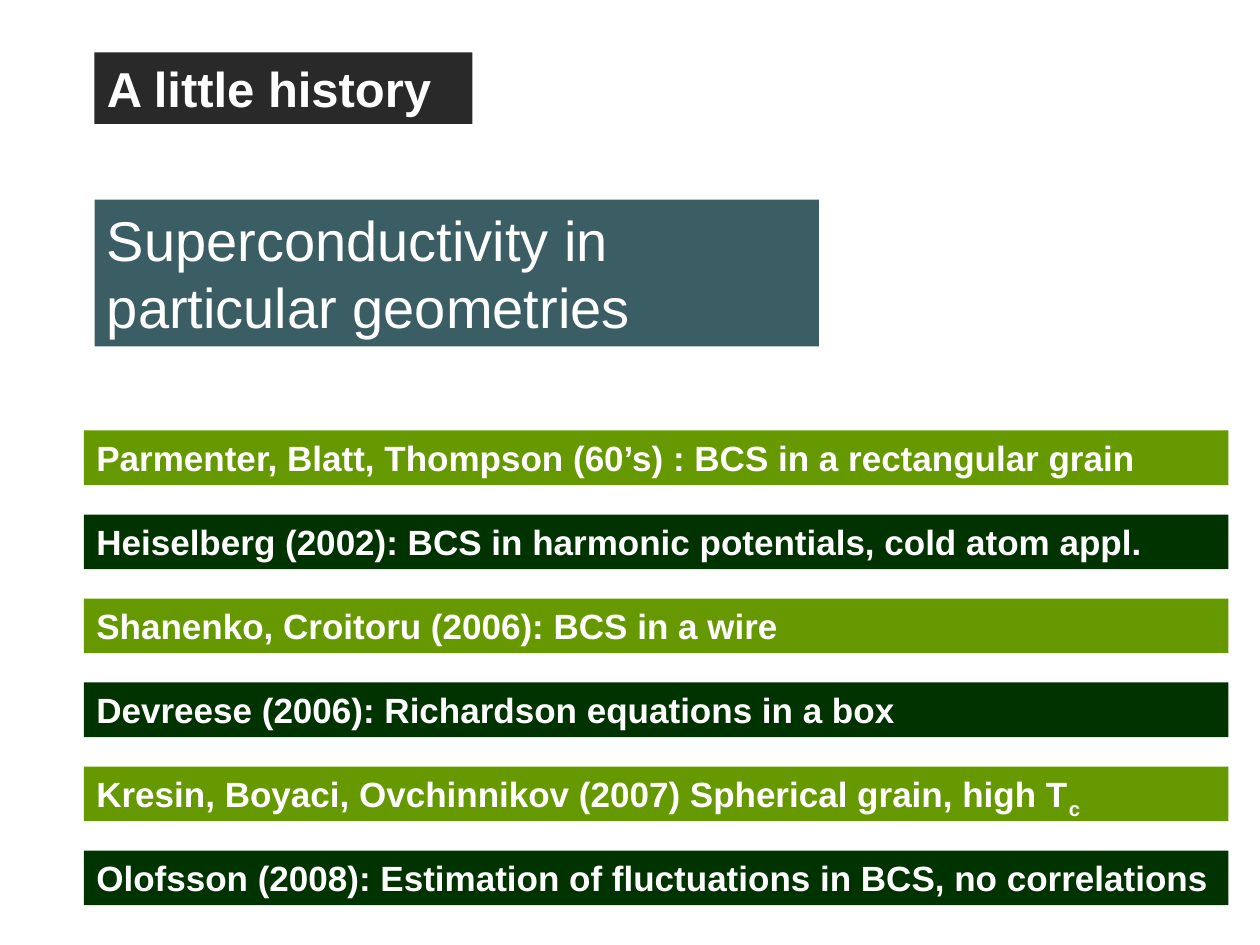
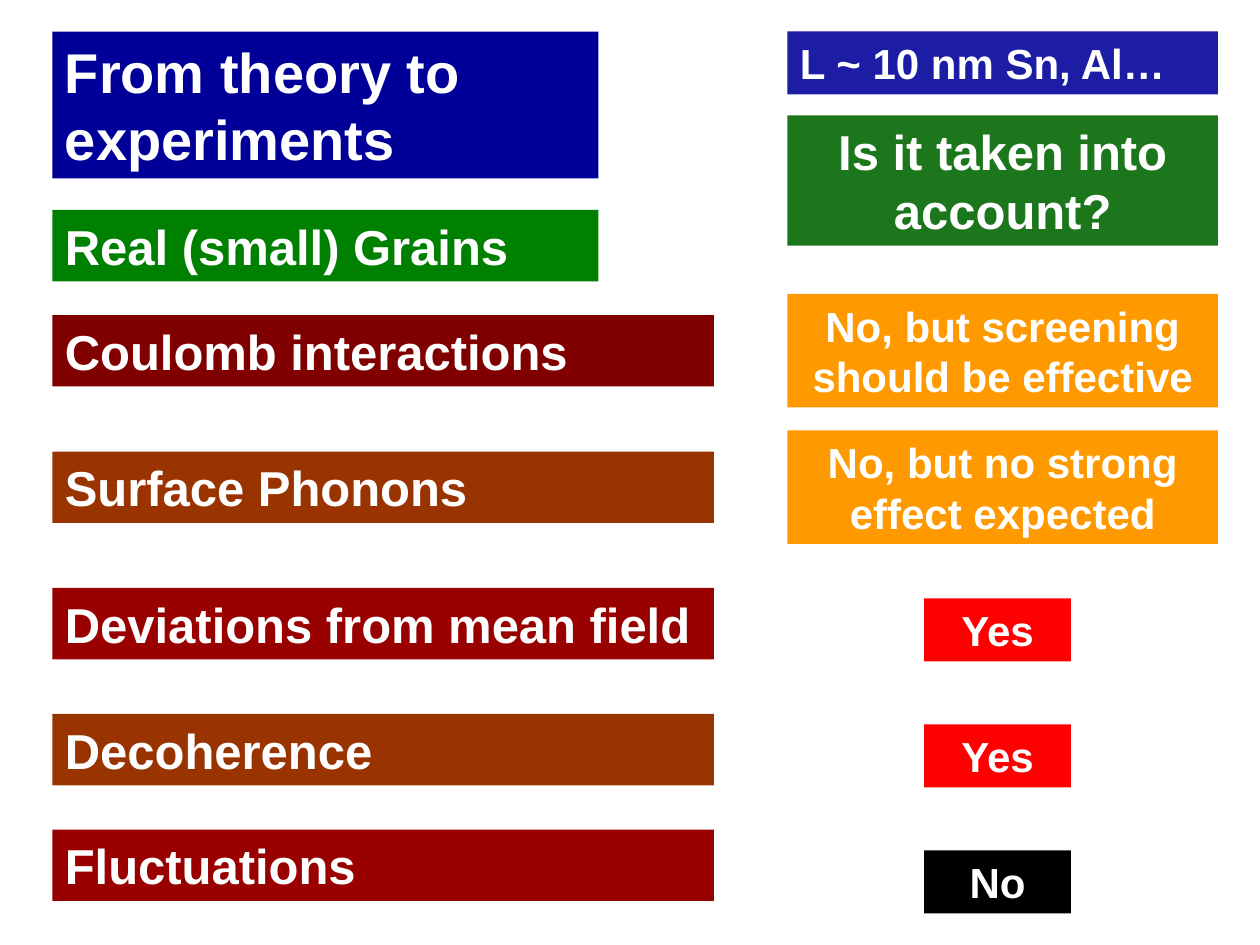
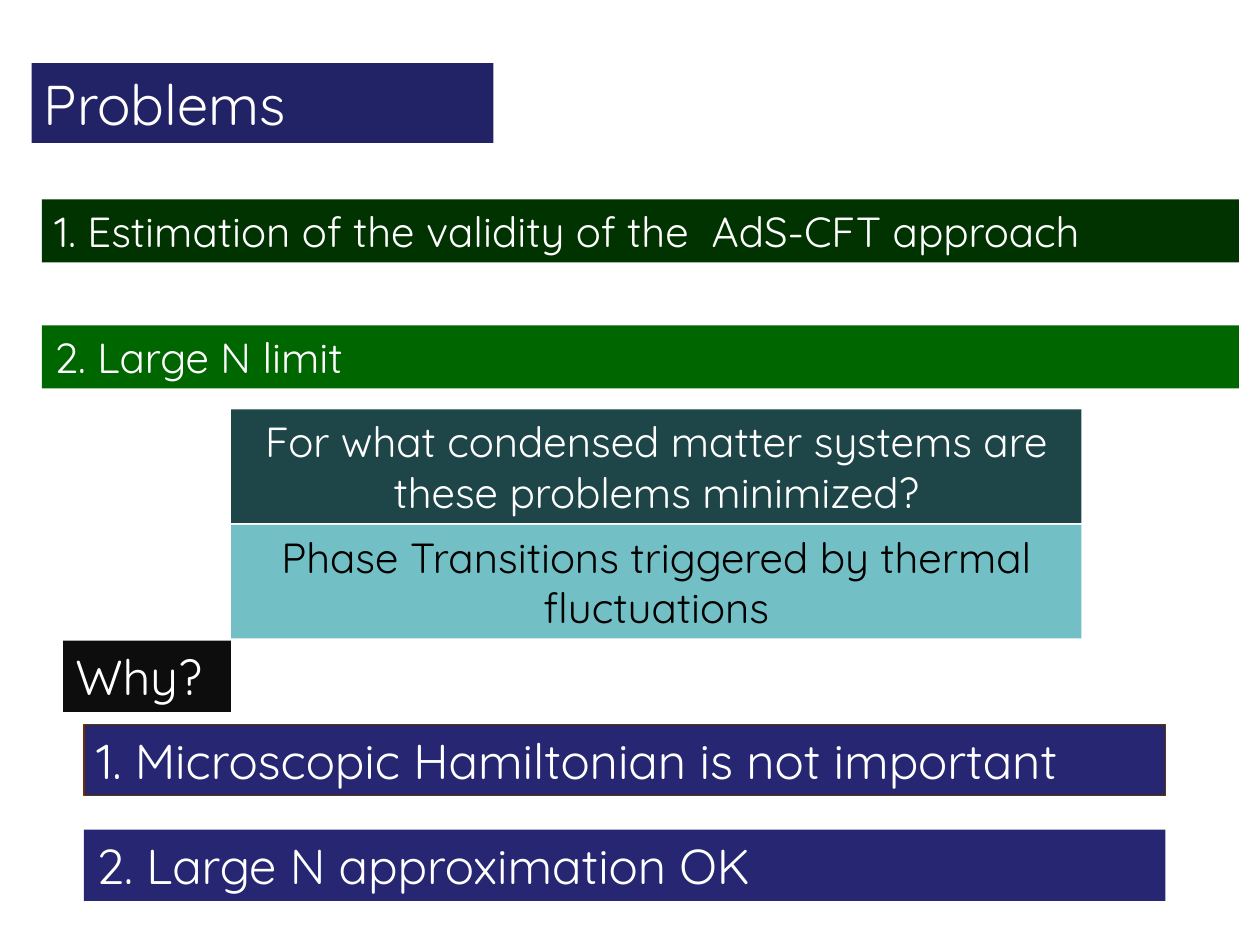
from itertools import cycle

from lxml.etree import SubElement
from pptx import Presentation
from pptx.dml.color import RGBColor
from pptx.enum.text import MSO_AUTO_SIZE, PP_ALIGN
from pptx.oxml.ns import qn
from pptx.util import Inches, Pt

# The slide is a grid of 120 columns by 90 rows, 12 to the inch.
CELL = Inches(1) // 12
WHITE = "FFFFFF"
DARK_GREEN = "003300"
LIME = "669900"
ORANGE = "FF9900"
RED = "FF0000"
MAROON = "990000"
RUST = "993300"
NAVY = "000099"
INDIGO = "262673"


def rgb(hex_string):
    return RGBColor.from_string(hex_string)


def band(slide, column, row, columns, text, size, fill, font="Arial", bold=True,
         color=WHITE, centred=False, lines=1, opacity=100, subscript=""):
    """Add a filled band of text whose height follows from its lines."""
    height = Inches(0.1) + Pt(1.2 * size * lines)
    box = slide.shapes.add_textbox(column * CELL, row * CELL, columns * CELL, height)
    box.fill.solid()
    box.fill.fore_color.rgb = rgb(fill)
    if opacity < 100:
        fill_color = box.fill._xPr.find(qn("a:solidFill"))[0]
        SubElement(fill_color, qn("a:alpha"), val=str(opacity * 1000))

    frame = box.text_frame
    frame.word_wrap = True
    frame.auto_size = MSO_AUTO_SIZE.SHAPE_TO_FIT_TEXT
    paragraph = frame.paragraphs[0]
    paragraph.alignment = PP_ALIGN.CENTER if centred else PP_ALIGN.LEFT
    for part in filter(None, (text, subscript)):
        run = paragraph.add_run()
        run.text = part
        run.font.name = font
        run.font.size = Pt(size)
        run.font.bold = bold
        run.font.color.rgb = rgb(color)
    if subscript:
        run.font._element.set("baseline", "-25000")
    return box


prs = Presentation()
prs.slide_width = 120 * CELL
prs.slide_height = 90 * CELL
blank = prs.slide_layouts[6]

# Slide 1: earlier work, one band per group of authors
history = prs.slides.add_slide(blank)
band(history, 9, 5, 36, "A little history", 28, "292929")
band(history, 9, 19, 69, "Superconductivity in particular geometries", 32, "224B50",
     bold=False, lines=2, opacity=89)

works = [
    ("Parmenter, Blatt, Thompson (60’s) : BCS in a rectangular grain", ""),
    ("Heiselberg (2002): BCS in harmonic potentials, cold atom appl.", ""),
    ("Shanenko, Croitoru (2006): BCS in a wire", ""),
    ("Devreese (2006): Richardson equations in a box", ""),
    ("Kresin, Boyaci, Ovchinnikov (2007) Spherical grain, high T", "c"),
    ("Olofsson (2008): Estimation of fluctuations in BCS, no correlations", ""),
]
for index, ((work, subscript), fill) in enumerate(zip(works, cycle([LIME, DARK_GREEN]))):
    band(history, 8, 41 + 8 * index, 109, work, 20, fill, subscript=subscript)

# Slide 2: effects on the left, whether they are included on the right
experiments = prs.slides.add_slide(blank)
band(experiments, 5, 3, 52, "From theory to experiments", 32, NAVY, lines=2)
band(experiments, 5, 20, 52, "Real (small) Grains", 28, "008000")
band(experiments, 75, 3, 41, "L ~ 10 nm Sn, Al…", 24, NAVY, opacity=89)
band(experiments, 75, 11, 41, "Is it taken into account?", 28, "006600",
     centred=True, lines=2, opacity=89)

effects = [
    (30, "Coulomb interactions", "800000"),
    (43, "Surface Phonons", RUST),
    (56, "Deviations from mean field", MAROON),
    (68, "Decoherence", RUST),
    (79, "Fluctuations", MAROON),
]
for row, effect, fill in effects:
    band(experiments, 5, row, 63, effect, 28, fill)

long_answers = [
    (28, "No, but screening should be effective"),
    (41, "No, but no strong effect expected"),
]
for row, answer in long_answers:
    band(experiments, 75, row, 41, answer, 24, ORANGE, centred=True, lines=2)

short_answers = [("Yes", RED), ("Yes", RED), ("No", "000000")]
for index, (answer, fill) in enumerate(short_answers):
    band(experiments, 88, 57 + 12 * index, 14, answer, 24, fill, centred=True)

# Slide 3: problems, the question they raise, and the reasons
problems = prs.slides.add_slide(blank)
light = {"font": "Quicksand", "bold": False}
band(problems, 3, 6, 44, "Problems", 32, "222267", **light)
band(problems, 4, 19, 114, "1. Estimation of the validity of the  AdS-CFT approach", 24,
     DARK_GREEN, **light)
band(problems, 4, 31, 114, "2. Large N limit", 24, "006600", **light)
band(problems, 22, 39, 81, "For what condensed matter systems are these problems minimized?",
     24, "1E4649", centred=True, lines=2, **light)
band(problems, 22, 50, 81, "Phase Transitions triggered by thermal fluctuations",
     24, "72BFC5", color="000000", centred=True, lines=2, **light)
band(problems, 6, 61, 16, "Why?", 28, "0D0D0D", **light)
hamiltonian = band(problems, 8, 69, 103, "1. Microscopic Hamiltonian is not important", 28,
                   INDIGO, **light)
hamiltonian.line.color.rgb = rgb("663300")
hamiltonian.line.width = Pt(0.75)
band(problems, 8, 79, 103, "2. Large N approximation OK", 28, INDIGO, **light)

prs.save("out.pptx")
